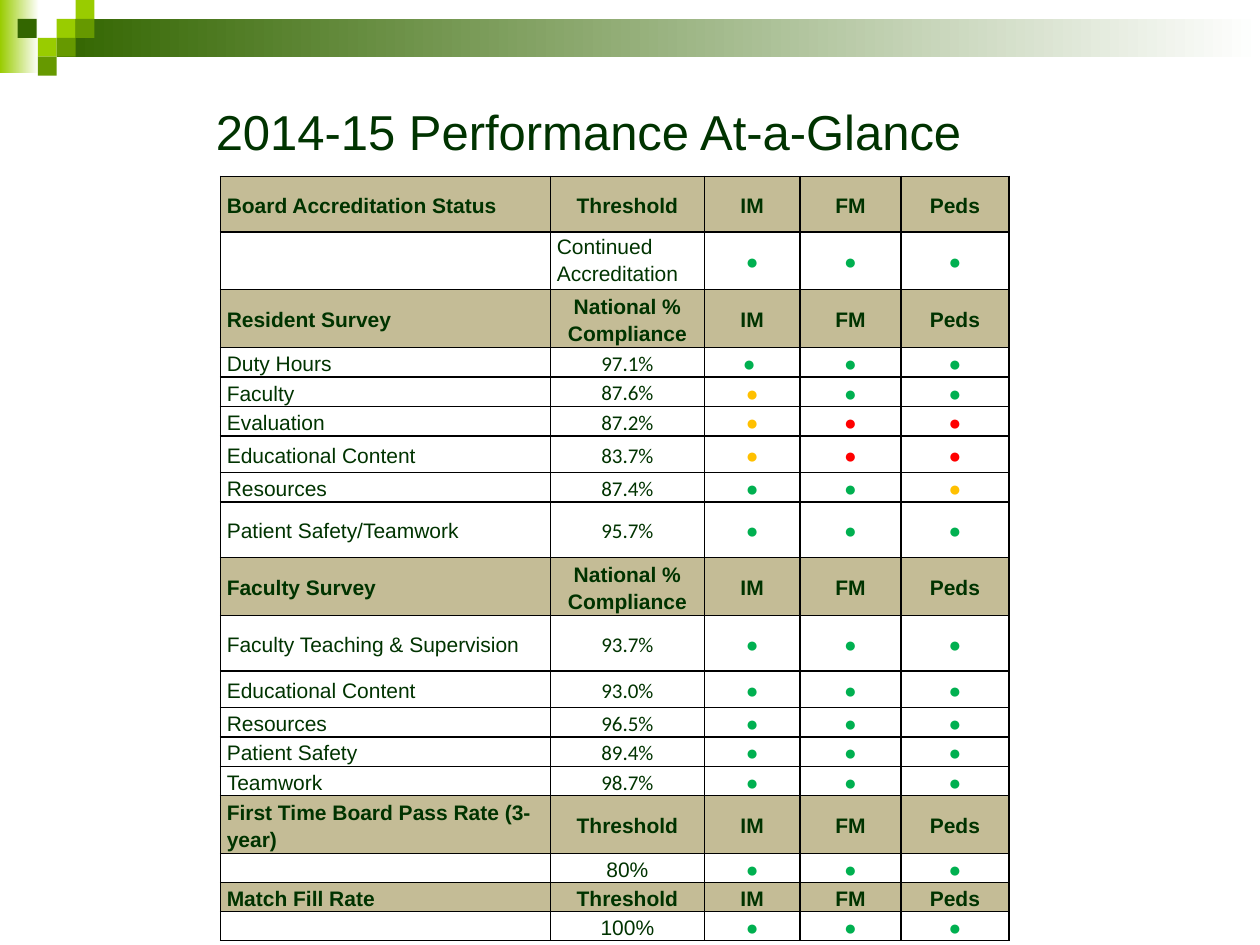
from lxml import etree
from pptx import Presentation
from pptx import util as u
from pptx.dml.color import RGBColor
from pptx.enum import shapes, text
from pptx.oxml import ns

INK, TAN, WHITE = "003300", "C4BC96", "FFFFFF"
LIME, LEAF, PINE = "99CC00", "669900", "336600"
DOTS = {"g": "00B050", "y": "FFC000", "r": "FF0000"}
COLS = [2.62, 1.22, 0.76, 0.8, 0.86]
SITES = ["IM", "FM", "Peds"]
ROWS = [
    (0.44, "Board Accreditation Status", "Threshold", ""),
    (0.46, "", "Continued Accreditation", "ggg"),
    (0.46, "Resident Survey", "National % Compliance", ""),
    (0.23, "Duty Hours", "97.1%", "ggg"),
    (0.23, "Faculty", "87.6%", "ygg"),
    (0.23, "Evaluation", "87.2%", "yrr"),
    (0.29, "Educational Content", "83.7%", "yrr"),
    (0.23, "Resources", "87.4%", "ggy"),
    (0.44, "Patient Safety/Teamwork", "95.7%", "ggg"),
    (0.46, "Faculty Survey", "National % Compliance", ""),
    (0.44, "Faculty Teaching & Supervision", "93.7%", "ggg"),
    (0.29, "Educational Content", "93.0%", "ggg"),
    (0.23, "Resources", "96.5%", "ggg"),
    (0.23, "Patient Safety", "89.4%", "ggg"),
    (0.23, "Teamwork", "98.7%", "ggg"),
    (0.46, "First Time Board Pass Rate (3-year)", "Threshold", ""),
    (0.23, "", "80%", "ggg"),
    (0.23, "Match Fill Rate", "Threshold", ""),
    (0.23, "", "100%", "ggg"),
]
TILES = [
    (0.45, 0.15, LIME), (0.6, 0, LIME), (0.6, 0.15, LEAF), (0.3, 0.3, LIME),
    (0.14, 0.15, PINE), (0.45, 0.3, LEAF), (0.3, 0.45, LEAF),
]


def rgb(hue):
    return RGBColor.from_string(hue)


class Deck:
    """Holds the style and the current slide."""

    def __init__(self, show):
        self.font, self.size = "Arial", 12
        self.slide = show.slides.add_slide(show.slide_layouts[5])

    def style(self, para, size, hue=INK, bold=False, font=None):
        for run in para.runs:
            run.font.size, run.font.bold = u.Pt(size), bold
            run.font.name = font or self.font
            run.font.color.rgb = rgb(hue)

    def rect(self, x, y, w, h, hue, fade=False):
        box = self.slide.shapes.add_shape(
            shapes.MSO_SHAPE.RECTANGLE, *map(u.Inches, (x, y, w, h)))
        box.shadow.inherit = False
        box.line.fill.background()
        if fade:
            box.fill.gradient()
            box.fill.gradient_angle = 0
            for stop, tone in zip(box.fill.gradient_stops, (hue, WHITE)):
                stop.color.rgb = rgb(tone)
        else:
            box.fill.solid()
            box.fill.fore_color.rgb = rgb(hue)

    def title(self, words, x, y, w, h):
        head = self.slide.shapes.title
        head.left, head.top, head.width, head.height = map(u.Inches, (x, y, w, h))
        frame = head.text_frame
        frame.text = words
        frame.vertical_anchor = text.MSO_ANCHOR.MIDDLE
        frame.paragraphs[0].alignment = text.PP_ALIGN.CENTER
        self.style(frame.paragraphs[0], 28)

    def border(self, cell):
        props = cell._tc.get_or_add_tcPr()
        for side in "LRTB":
            line = etree.SubElement(props, ns.qn(f"a:ln{side}"), w=str(u.Pt(1)))
            fill = etree.SubElement(line, ns.qn("a:solidFill"))
            etree.SubElement(fill, ns.qn("a:srgbClr"), val="000000")

    def cell(self, cell, words, back, center=True, top=False, **look):
        self.border(cell)
        cell.fill.solid()
        cell.fill.fore_color.rgb = rgb(back)
        cell.margin_left = cell.margin_right = u.Inches(0.05)
        cell.margin_top = cell.margin_bottom = 0
        cell.vertical_anchor = text.MSO_ANCHOR.TOP if top else text.MSO_ANCHOR.MIDDLE
        cell.text_frame.text = words
        para = cell.text_frame.paragraphs[0]
        para.line_spacing = 1.15
        para.alignment = text.PP_ALIGN.CENTER if center else text.PP_ALIGN.LEFT
        self.style(para, self.size, **look)
        if not words:
            etree.SubElement(para._p, ns.qn("a:endParaRPr"), sz=str(self.size * 100))

    def table(self, x, y, cols, rows):
        high = sum(row[0] for row in rows)
        grid = self.slide.shapes.add_table(
            len(rows), len(cols), *map(u.Inches, (x, y, sum(cols), high))).table
        grid.first_row = grid.horz_banding = False
        for col, wide in zip(grid.columns, cols):
            col.width = u.Inches(wide)
        for i, (tall, name, goal, marks) in enumerate(rows):
            grid.rows[i].height = u.Inches(tall)
            band = not marks
            back = TAN if band else WHITE
            wordy = goal.startswith("Continued")
            face = "Calibri" if "." in goal else self.font
            self.cell(grid.cell(i, 0), name, back, center=False, bold=band)
            self.cell(grid.cell(i, 1), goal, back, center=not wordy, top=wordy,
                      bold=band, font=face)
            for j, site in enumerate(SITES):
                dot = "● " if (name, site) == ("Duty Hours", "IM") else "●"
                self.cell(grid.cell(i, j + 2), site if band else dot, back, bold=band,
                          hue=INK if band else DOTS[marks[j]])


def main():
    show = Presentation()
    show.slide_width, show.slide_height = u.Inches(10), u.Inches(7.5)
    deck = Deck(show)
    deck.rect(0, 0, 0.31, 0.58, LIME, fade=True)
    deck.rect(0.45, 0.15, 9.55, 0.3, PINE, fade=True)
    for x, y, hue in TILES:
        deck.rect(x, y, 0.15, 0.15, hue)
    deck.title("2014-15 Performance At-a-Glance", 0.42, 0.58, 8.5, 0.92)
    deck.table(1.75, 1.4, COLS, ROWS)
    show.save("out.pptx")


if __name__ == "__main__":
    main()
